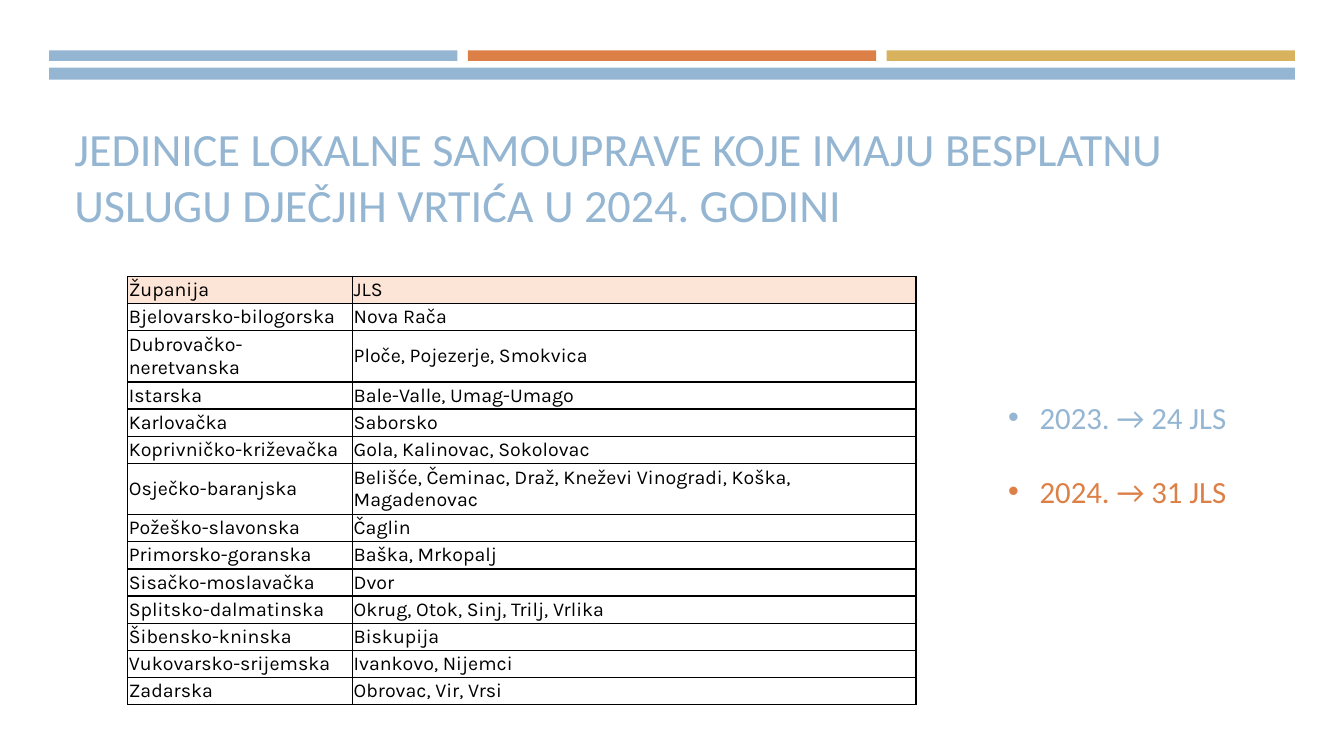
from lxml import etree
from pptx import Presentation
from pptx.dml.color import RGBColor
from pptx.enum import shapes, text
from pptx.oxml import ns
from pptx.util import Pt

BLUE = RGBColor(0x94, 0xB6, 0xD2)
ORANGE = RGBColor(0xDD, 0x80, 0x47)
GOLD = RGBColor(0xD8, 0xB2, 0x5C)
PEACH = RGBColor(0xFC, 0xE4, 0xD6)
WHITE = RGBColor(0xFF, 0xFF, 0xFF)
BLACK = RGBColor(0, 0, 0)

TITLE = "JEDINICE LOKALNE SAMOUPRAVE KOJE IMAJU BESPLATNU USLUGU DJEČJIH VRTIĆA U 2024. GODINI"
TOTALS = [("2023. → 24 JLS", BLUE), ("2024. → 31 JLS", ORANGE)]
COUNTIES = [
    ("Županija", "JLS"),
    ("Bjelovarsko-bilogorska", "Nova Rača"),
    ("Dubrovačko-neretvanska", "Ploče, Pojezerje, Smokvica"),
    ("Istarska", "Bale-Valle, Umag-Umago"),
    ("Karlovačka", "Saborsko"),
    ("Koprivničko-križevačka", "Gola, Kalinovac, Sokolovac"),
    ("Osječko-baranjska", "Belišće, Čeminac, Draž, Kneževi Vinogradi, Koška, Magadenovac"),
    ("Požeško-slavonska", "Čaglin"),
    ("Primorsko-goranska", "Baška, Mrkopalj"),
    ("Sisačko-moslavačka", "Dvor"),
    ("Splitsko-dalmatinska", "Okrug, Otok, Sinj, Trilj, Vrlika"),
    ("Šibensko-kninska", "Biskupija"),
    ("Vukovarsko-srijemska", "Ivankovo, Nijemci"),
    ("Zadarska", "Obrovac, Vir, Vrsi"),
]
TWO_LINE_ROWS = (2, 6)


def format_runs(p, font, size, color):
    for r in p.runs:
        r.font.name = font
        r.font.size = Pt(size)
        r.font.color.rgb = color


def add_bar(s, x, y, w, h, color):
    sp = s.shapes.add_shape(shapes.MSO_SHAPE.RECTANGLE, Pt(x), Pt(y), Pt(w), Pt(h))
    sp.shadow.inherit = False
    sp.fill.solid()
    sp.fill.fore_color.rgb = color
    sp.line.fill.background()


def add_header_bars(s, x, y, w):
    gap = 7.5
    bar_w = (w - 2 * gap) / 3
    for i, color in enumerate((BLUE, ORANGE, GOLD)):
        add_bar(s, x + i * (bar_w + gap), y, bar_w, 7.5, color)
    add_bar(s, x, y + 12.4, w, 8.6, BLUE)


def add_text_box(s, x, y, w, h):
    tf = s.shapes.add_textbox(Pt(x), Pt(y), Pt(w), Pt(h)).text_frame
    tf.word_wrap = True
    return tf


def add_title(s, x, y, w, h):
    tf = add_text_box(s, x, y, w, h)
    tf.vertical_anchor = text.MSO_ANCHOR.BOTTOM
    tf.text = TITLE
    format_runs(tf.paragraphs[0], "Calibri", 33, BLUE)


def add_totals(s, x, y, w, h):
    tf = add_text_box(s, x, y, w, h)
    tf.text = "\n".join(label for label, _ in TOTALS)
    for i, (p, (_, color)) in enumerate(zip(tf.paragraphs, TOTALS)):
        format_runs(p, "Calibri", 22, color)
        p.space_before = Pt(26.5 * i)
        pPr = p._p.get_or_add_pPr()
        pPr.set("marL", str(Pt(22.5)))
        pPr.set("indent", str(-Pt(22.5)))
        etree.SubElement(pPr, ns.qn("a:buFont")).set("typeface", "Arial")
        etree.SubElement(pPr, ns.qn("a:buChar")).set("char", "•")


def add_borders(cell):
    tcPr = cell._tc.get_or_add_tcPr()
    for i, side in enumerate(("lnL", "lnR", "lnT", "lnB")):
        ln = etree.Element(ns.qn(f"a:{side}"), w=str(Pt(1)))
        fill = etree.SubElement(ln, ns.qn("a:solidFill"))
        etree.SubElement(fill, ns.qn("a:srgbClr")).set("val", str(BLACK))
        tcPr.insert(i, ln)


def add_county_table(s, x, y, w, h):
    tall = 36.8
    short = (h - tall * len(TWO_LINE_ROWS)) / (len(COUNTIES) - len(TWO_LINE_ROWS))
    table = s.shapes.add_table(len(COUNTIES), 2, Pt(x), Pt(y), Pt(w), Pt(h)).table
    table.first_row = table.horz_banding = False
    county_w = 160.6
    table.columns[0].width = Pt(county_w)
    table.columns[1].width = Pt(w - county_w)
    for i, row in enumerate(COUNTIES):
        table.rows[i].height = Pt(tall if i in TWO_LINE_ROWS else short)
        for j, label in enumerate(row):
            cell = table.cell(i, j)
            cell.margin_left = cell.margin_right = Pt(0.75)
            cell.margin_top = cell.margin_bottom = Pt(0.75)
            cell.vertical_anchor = text.MSO_ANCHOR.MIDDLE
            cell.fill.solid()
            cell.fill.fore_color.rgb = WHITE if i else PEACH
            cell.text = label
            format_runs(cell.text_frame.paragraphs[0], "Karla", 14, BLACK)
            add_borders(cell)


def main():
    prs = Presentation()
    prs.slide_width, prs.slide_height = Pt(960), Pt(540)
    s = prs.slides.add_slide(prs.slide_layouts[6])
    add_header_bars(s, 35, 36, 890)
    add_title(s, 46, 57, 865.5, 112)
    add_totals(s, 713, 281, 198.5, 87)
    add_county_table(s, 91.3, 197.3, 563, 306)
    prs.save("out.pptx")


if __name__ == "__main__":
    main()
